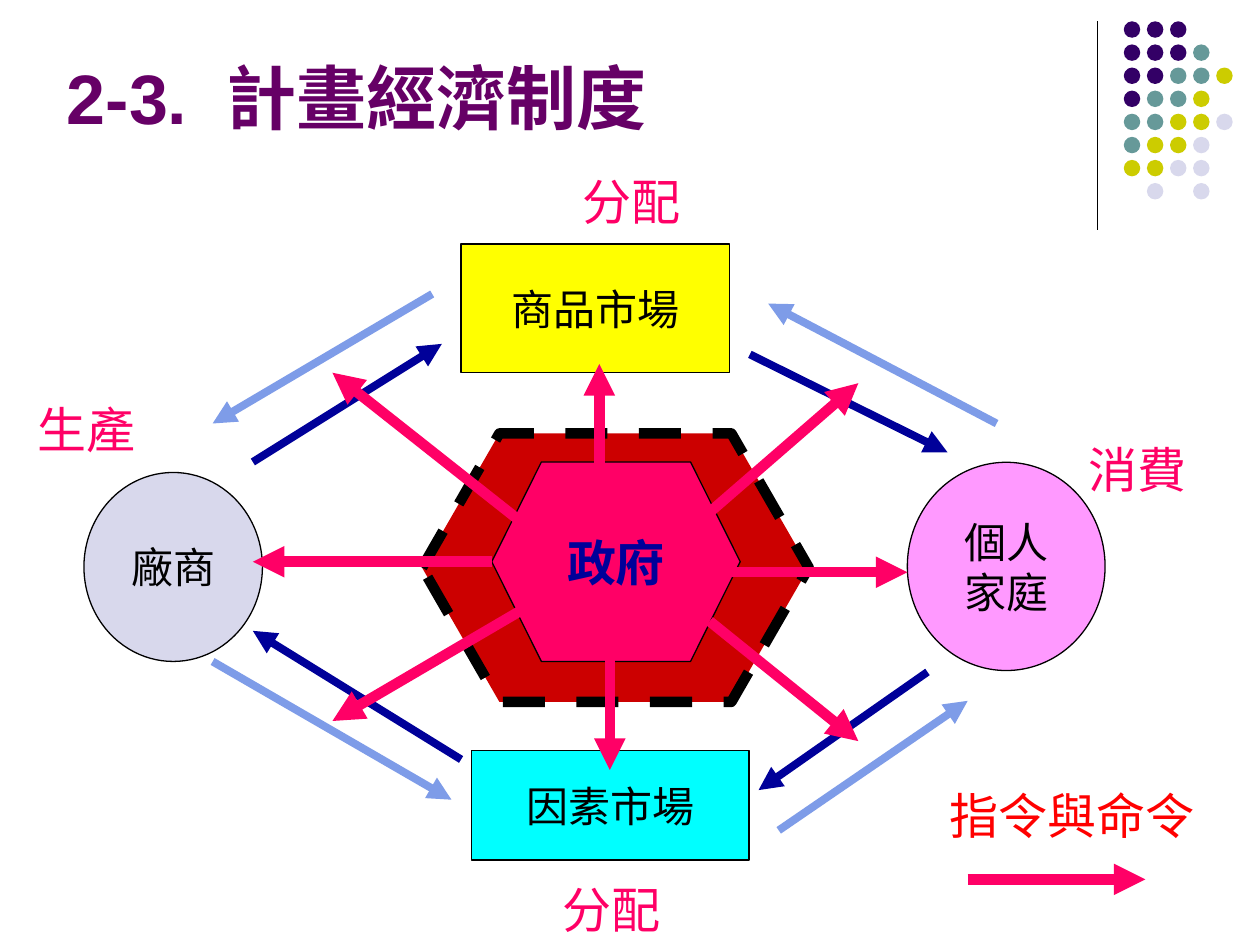
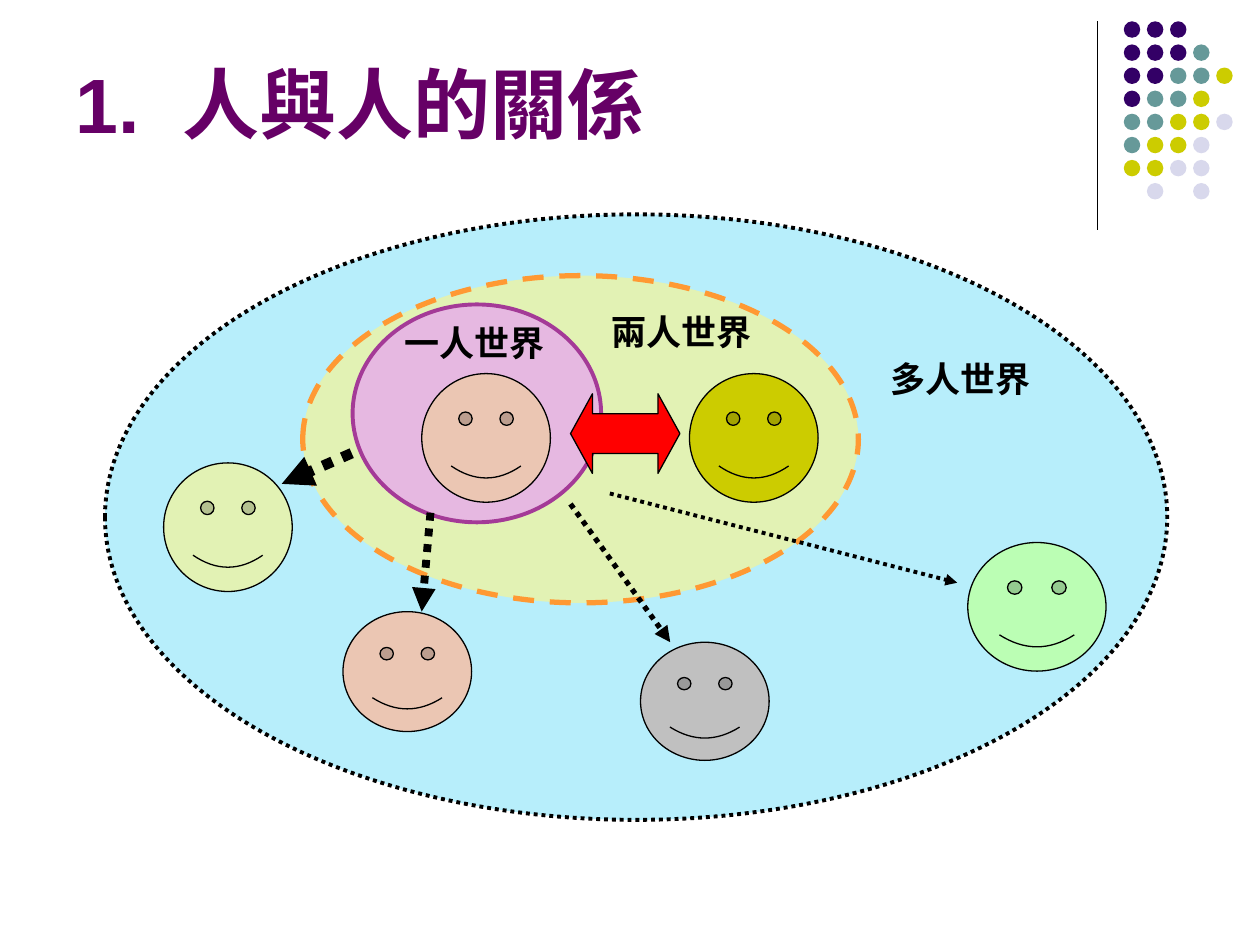
from lxml import etree
from pptx import Presentation
from pptx.dml.color import RGBColor
from pptx.enum.dml import MSO_LINE
from pptx.enum.shapes import MSO_CONNECTOR, MSO_SHAPE
from pptx.enum.text import MSO_ANCHOR, MSO_AUTO_SIZE, PP_ALIGN
from pptx.oxml.ns import qn
from pptx.util import Pt

STRAIGHT = MSO_CONNECTOR.STRAIGHT
OVAL, RECT = MSO_SHAPE.OVAL, MSO_SHAPE.RECTANGLE
HEXAGON = MSO_SHAPE.FLOWCHART_PREPARATION
SMILEY, TWO_WAY = MSO_SHAPE.SMILEY_FACE, MSO_SHAPE.LEFT_RIGHT_ARROW
DASH, DOT = MSO_LINE.DASH, MSO_LINE.ROUND_DOT
LEFT, CENTER = PP_ALIGN.LEFT, PP_ALIGN.CENTER
MIDDLE, BOTTOM = MSO_ANCHOR.MIDDLE, MSO_ANCHOR.BOTTOM
NO_FIT = MSO_AUTO_SIZE.NONE

FONT = "Arial"
BLACK, PLUM, NAVY, SKY = "000000", "660066", "000099", "7E9CE8"
PINK, RED, LILAC, OLIVE = "FF0066", "FF0000", "D8D8EC", "CCCC00"
LIME, SKIN = "E2F2B4", "EBC6B3"
DOT_COLORS = {"P": "330066", "T": "669999", "Y": OLIVE, "L": LILAC}
DOT_ROWS = ["PPP", "PPPT", "PPTTY", "PTTY", "TTYYL", "TYYL", "YYLL", " L L"]


def rgb(value):
    return RGBColor.from_string(value)


def place(box, left, top, width, height):
    return Pt(box[0] + left), Pt(box[1] + top), Pt(width), Pt(height)


def add_run(p, text, size=24, color=BLACK, bold=False):
    r = p.add_run()
    r.text = text
    r.font.name = FONT
    r.font.size = Pt(size)
    r.font.bold = bold
    r.font.color.rgb = rgb(color)
    return r


def write(tf, text, align=LEFT, **fmt):
    for i, line in enumerate(text.split("\n")):
        p = tf.add_paragraph() if i else tf.paragraphs[0]
        p.alignment = align
        add_run(p, line, **fmt)


def style_line(line, color, width, dash=None):
    line.color.rgb = rgb(color)
    line.width = Pt(width)
    if dash:
        line.dash_style = dash


def add_shape(s, box, kind, rect, fill, line=BLACK, width=0.75, dash=None,
              text="", **fmt):
    sp = s.shapes.add_shape(kind, *place(box, *rect))
    sp.shadow.inherit = False
    sp.fill.solid()
    sp.fill.fore_color.rgb = rgb(fill)
    if line:
        style_line(sp.line, line, width, dash)
    else:
        sp.line.fill.background()
    if text:
        tf = sp.text_frame
        tf.word_wrap = False
        tf.vertical_anchor = MIDDLE
        write(tf, text, align=CENTER, **fmt)
    return sp


def add_line(s, box, ends, color=BLACK, width=0.75, dash=None, arrow=True):
    x1, y1, x2, y2 = ends
    c = s.shapes.add_connector(STRAIGHT, Pt(box[0] + x1), Pt(box[1] + y1),
                               Pt(box[0] + x2), Pt(box[1] + y2))
    style_line(c.line, color, width, dash)
    sp_pr = c._element.spPr
    if arrow:
        etree.SubElement(sp_pr.find(qn("a:ln")), qn("a:tailEnd"), type="triangle")
    etree.SubElement(sp_pr, qn("a:effectLst"))


def add_label(s, box, rect, text, **fmt):
    tf = s.shapes.add_textbox(*place(box, *rect)).text_frame
    tf.word_wrap = False
    write(tf, text, **fmt)


def add_dot_corner(s, box):
    pitch, size = 13.2, 9.4
    add_line(s, box, (0, 0, 0, 119.5), arrow=False)
    for row, codes in enumerate(DOT_ROWS):
        for col, code in enumerate(codes):
            if code in DOT_COLORS:
                rect = (15.2 + col * pitch, row * pitch, size, size)
                add_shape(s, box, OVAL, rect, DOT_COLORS[code], line=None)


def add_title(s, box, number, text, size):
    title = s.shapes.title
    title.left, title.top, title.width, title.height = map(Pt, box)
    tf = title.text_frame
    tf.word_wrap = True
    tf.auto_size = NO_FIT
    tf.vertical_anchor = BOTTOM
    p = tf.paragraphs[0]
    p.alignment = LEFT
    fmt = {"size": size, "color": PLUM, "bold": True}
    add_run(p, number, **fmt)
    gap = add_run(p, " ", **fmt)
    gap._r.get_or_add_rPr().set("spc", str(size * 28))
    add_run(p, text, **fmt)


def new_slide(prs, title_box, number, text, size):
    s = prs.slides.add_slide(prs.slide_layouts[5])
    add_dot_corner(s, (627, 12.2))
    add_title(s, title_box, number, text, size)
    return s


def add_planned_economy(s, box):
    add_shape(s, box, HEXAGON, (241.2, 157.7, 221, 153.4), "CC0000",
              width=6, dash=DASH)

    inner_flows = [(428.5, 112.5, 541.5, 168.5), (530, 294, 433.5, 361.5),
                   (144.5, 174, 252.5, 106.5), (263.5, 344, 144.5, 270.5)]
    outer_flows = [(121.5, 288, 258, 367), (445, 384.5, 553, 310.5),
                   (569.5, 152, 439, 83.5), (247, 78, 121.5, 152)]
    for color, flows in ((NAVY, inner_flows), (SKY, outer_flows)):
        for ends in flows:
            add_line(s, box, ends, color, 4.5)

    actors = [(OVAL, (518.5, 174.2, 113, 119), "FF99FF", "個人\n家庭"),
              (OVAL, (48, 180, 102, 108), LILAC, "廠商"),
              (RECT, (269.5, 339, 158.5, 62.5), "00FFFF", "因素市場"),
              (RECT, (263.5, 49.5, 153.5, 73.5), "FFFF00", "商品市場")]
    for kind, rect, fill, text in actors:
        add_shape(s, box, kind, rect, fill, text=text)
    add_shape(s, box, HEXAGON, (281, 174, 142, 114), PINK, text="政府",
              size=28, color=NAVY, bold=True)

    commands = [(399.5, 208, 490.5, 129), (297.5, 208, 190, 123),
                (342.5, 186, 342.5, 118), (281, 231, 144.5, 231),
                (417, 237, 518.5, 237), (405.5, 265, 490.5, 333.5),
                (348.5, 282, 348.5, 350), (297.5, 259, 190, 322)]
    legend_arrow = (553, 412.5, 654.5, 412.5)
    for ends in commands + [legend_arrow]:
        add_line(s, box, ends, PINK, 6)

    labels = [(326, 4.5, "分配"), (314.5, 409, "分配"),
              (615, 157.5, "消費"), (14.5, 134.5, "生產")]
    for left, top, text in labels:
        add_label(s, box, (left, top, 70.5, 41), text, size=28, color=PINK)
    add_label(s, box, (535.5, 355.5, 155, 41), "指令與命令", size=28, color=RED)


def add_worlds(s, box):
    add_shape(s, box, OVAL, (0, 0, box[2], box[3]), "B7EEFB", width=2.25, dash=DOT)
    others = [((306, 244.5, 73.5, 67.5), "C0C0C0"),
              ((493, 187.5, 79, 73.5), "BBFEB4"),
              ((136, 227, 73.5, 68.5), SKIN),
              ((33.5, 142, 73.5, 73.5), LIME)]
    for rect, fill in others:
        add_shape(s, box, SMILEY, rect, fill)

    add_shape(s, box, OVAL, (113, 35, 317.5, 187), LIME, "FF9933", 3, DASH)
    add_shape(s, box, SMILEY, (334, 91, 73.5, 73.5), OLIVE)
    add_shape(s, box, OVAL, (141.5, 51.5, 142, 124.5), "E6B8E1", "A43A97", 2.25)
    add_shape(s, box, SMILEY, (181, 91, 73.5, 73.5), SKIN)
    bond = add_shape(s, box, TWO_WAY, (266, 102.5, 62.5, 45.5), RED)
    bond.adjustments[0], bond.adjustments[1] = 0.5, 0.275

    ties = [((141, 136.5, 101, 154), 6), ((186, 170.5, 181, 227), 4.5),
            ((266, 165.5, 323, 244.5), 3), ((288.5, 159.5, 487, 210.5), 2.25)]
    for ends, width in ties:
        add_line(s, box, ends, width=width, dash=DOT)

    labels = [(164, 57.5, "一人世界"), (282.5, 51.5, "兩人世界"),
              (442, 78, "多人世界")]
    for left, top, text in labels:
        add_label(s, box, (left, top, 94.5, 31), text, size=20, bold=True)


def main():
    prs = Presentation()
    prs.slide_width, prs.slide_height = Pt(720), Pt(540)
    s = new_slide(prs, (31, 9.5, 594, 73.5), "2-3.", "計畫經濟制度", 40)
    add_planned_economy(s, (0, 90, 720, 450))
    s = new_slide(prs, (36, 9.5, 584.5, 79), "1.", "人與人的關係", 44)
    add_worlds(s, (60, 122.5, 607, 346))
    prs.save("out.pptx")


if __name__ == "__main__":
    main()
